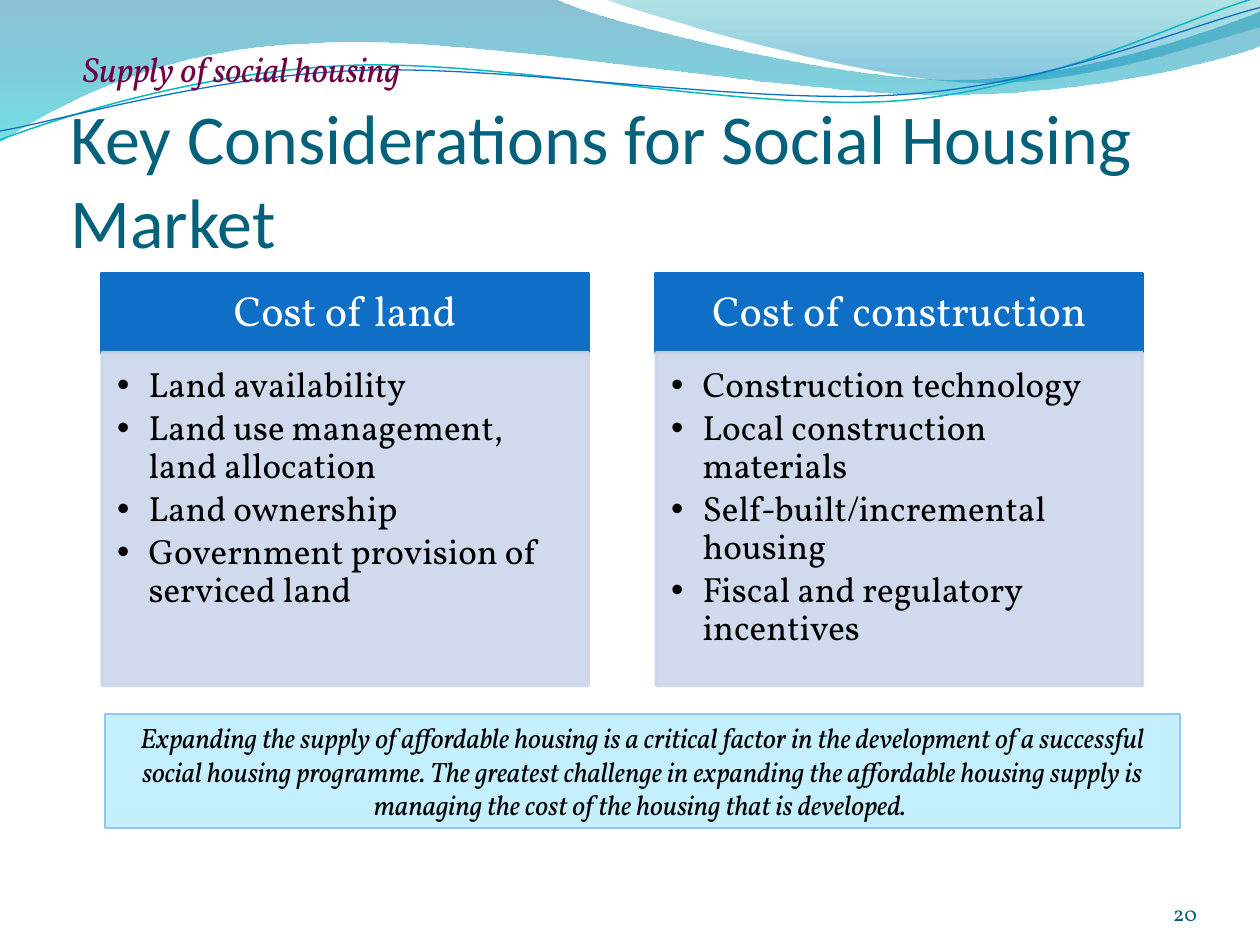
from lxml import etree
from pptx import Presentation
from pptx.dml.color import RGBColor
from pptx.enum.shapes import MSO_SHAPE
from pptx.enum.text import MSO_ANCHOR, MSO_AUTO_SIZE, PP_ALIGN
from pptx.oxml.ns import qn
from pptx.util import Cm, Pt

LEFT, CENTER, RIGHT = PP_ALIGN.LEFT, PP_ALIGN.CENTER, PP_ALIGN.RIGHT
TOP, MIDDLE, BOTTOM = MSO_ANCHOR.TOP, MSO_ANCHOR.MIDDLE, MSO_ANCHOR.BOTTOM
NO_AUTOFIT, GROW = MSO_AUTO_SIZE.NONE, MSO_AUTO_SIZE.SHAPE_TO_FIT_TEXT
RECTANGLE = MSO_SHAPE.RECTANGLE
SERIF, SANS = "Vollkorn", "Calibri"
DEFAULT_INSETS = (0.25, 0.13, 0.25, 0.13)
WAVE_UNIT = Cm(2.54)

LEFT_WAVE = [(0, 0), (4.4, -0.01), (4.76, 0.17, 6.64, 0.63, 7.58, 0.63),
             (8.53, 0.63, 9.58, 0.26, 10, 0.09), (10.01, 0.36),
             (9.83, 0.44, 8.7, 0.76, 7.46, 0.75), (6.22, 0.75, 3.82, 0.28, 2.57, 0.34),
             (1.29, 0.36, 0.46, 0.83, -0.01, 1.13), (0, 0)]
RIGHT_WAVE = [(4.79, -0.01), (5.09, 0.11, 6.82, 0.62, 7.69, 0.65),
              (8.56, 0.69, 9.61, 0.32, 10, 0.21), (10, 0), (4.79, -0.01)]
TEAL_LINE = [(0, 1.11), (0.48, 0.93, 1.58, 0.57, 2.77, 0.52),
             (3.95, 0.47, 5.93, 0.89, 7.13, 0.8), (8.33, 0.71, 9.38, 0.15, 9.98, -0.02)]
BLUE_LINE = [(0, 1.04), (0.47, 0.96, 1.64, 0.61, 2.83, 0.56),
             (4.03, 0.51, 5.97, 0.84, 7.17, 0.75), (8.36, 0.67, 9.41, 0.21, 10, 0.06)]

CARDS = [
    ("Cost of land",
     ["Land availability", "Land use management, land allocation", "Land ownership",
      "Government provision of serviced land"]),
    ("Cost of construction",
     ["Construction technology", "Local construction materials",
      "Self-built/incremental housing", "Fiscal and regulatory incentives"]),
]
NOTE = ("Expanding the supply of affordable housing is a critical factor in the development "
        "of a successful social housing programme. The greatest challenge in expanding the "
        "affordable housing supply is managing the cost of the housing that is developed. ")


def color(value):
    """Return the colour for a hex string."""
    return RGBColor.from_string(value)


def set_alphas(shape, percents):
    """Give the shape's own colours, in order, these opacities."""
    colors = shape._element.spPr.iter(qn("a:srgbClr"))
    for element, percent in zip(colors, percents):
        etree.SubElement(element, qn("a:alpha"), val=str(percent * 1000))


def add_path(slide, segments, close):
    """Add an outline of lines (two numbers) and cubic curves (six numbers)."""
    points = [(segment[i] * WAVE_UNIT, segment[i + 1] * WAVE_UNIT)
              for segment in segments for i in range(0, len(segment), 2)]
    builder = slide.shapes.build_freeform(*points[0])
    builder.add_line_segments(points[1:], close=close)
    shape = builder.convert_to_shape()
    shape.shadow.inherit = False
    lines = iter(list(shape._element.spPr.iter(qn("a:lnTo"))))
    for segment in segments[1:]:
        line = next(lines)
        if len(segment) == 6:
            line.tag = qn("a:cubicBezTo")
            for control in (next(lines), next(lines)):
                line.append(control[0])
                control.getparent().remove(control)
    return shape


def add_wave(slide, segments, stops):
    """Add a wave with a see-through gradient from top to bottom."""
    shape = add_path(slide, segments, True)
    shape.line.fill.background()
    shape.fill.gradient()
    shape.fill.gradient_angle = 270
    for gradient_stop, (position, value, _) in zip(shape.fill.gradient_stops, stops):
        gradient_stop.position = position
        gradient_stop.color.rgb = color(value)
    set_alphas(shape, [alpha for _, _, alpha in stops])


def add_wave_line(slide, segments, value, width):
    """Add a thin curved line."""
    shape = add_path(slide, segments, False)
    shape.fill.background()
    shape.line.color.rgb = color(value)
    shape.line.width = Pt(width)


def write(shape, lines, size, value, font=SERIF, align=LEFT, anchor=MIDDLE,
          insets=DEFAULT_INSETS, italic=False, fit=NO_AUTOFIT):
    """Write formatted paragraphs into a shape and return them."""
    frame = shape.text_frame
    frame.text = "\n".join(lines)
    frame.word_wrap = True
    frame.auto_size = fit
    frame.vertical_anchor = anchor
    (frame.margin_left, frame.margin_top,
     frame.margin_right, frame.margin_bottom) = map(Cm, insets)
    for paragraph in frame.paragraphs:
        paragraph.alignment = align
        paragraph.font.name = font
        paragraph.font.size = Pt(size)
        paragraph.font.italic = italic
        paragraph.font.color.rgb = color(value)
    return frame.paragraphs


def add_label(slide, box, text, size, value, **formats):
    """Add a text box with one line of text."""
    write(slide.shapes.add_textbox(*map(Cm, box)), [text], size, value, **formats)


def add_box(slide, box, fill, line, width):
    """Add a filled rectangle."""
    shape = slide.shapes.add_shape(RECTANGLE, *map(Cm, box))
    shape.shadow.inherit = False
    shape.fill.solid()
    shape.fill.fore_color.rgb = color(fill)
    shape.line.color.rgb = color(line)
    shape.line.width = Pt(width)
    return shape


def add_bullet(paragraph):
    """Give a paragraph a hanging bullet."""
    paragraph.level = 1
    properties = paragraph._p.get_or_add_pPr()
    properties.set("marL", str(Cm(0.635)))
    properties.set("indent", str(-Cm(0.635)))
    etree.SubElement(properties, qn("a:buFont"), typeface="Arial")
    etree.SubElement(properties, qn("a:buChar"), char="•")
    properties.append(properties.find(qn("a:defRPr")))


def add_card(slide, left, heading, items):
    """Add a heading bar above a panel of bullets."""
    header = add_box(slide, (left, 5.51, 9.8, 1.6), "0F6FC6", "0F6FC6", 2)
    for paragraph in write(header, [heading], 24, "FFFFFF", align=CENTER,
                           insets=(0.48, 0.28, 0.48, 0.28)):
        paragraph.line_spacing = 0.9
    panel = add_box(slide, (left, 7.11, 9.8, 6.71), "CCD5EA", "CCD5EA", 2)
    set_alphas(panel, (90, 90))
    for paragraph in write(panel, items, 20, "000000", anchor=TOP,
                           insets=(0.3, 0.3, 0.41, 0.43)):
        paragraph.line_spacing = 0.9
        paragraph.space_after = Pt(3)
        add_bullet(paragraph)


def add_title(slide, box, text):
    """Format the title placeholder and bring it to the front."""
    title = slide.shapes.title
    title.left, title.top, title.width, title.height = map(Cm, box)
    write(title, [text], 40, "04617B", font=SANS, anchor=BOTTOM, insets=(0, 0.13, 0, 0))
    slide.shapes._spTree.append(title._element)


def main():
    """Build the slide and save it."""
    presentation = Presentation()
    presentation.slide_width, presentation.slide_height = Cm(25.4), Cm(19.05)
    slide = presentation.slides.add_slide(presentation.slide_layouts[5])
    add_wave(slide, LEFT_WAVE, [(0, "0074A1", 45), (1, "00C6CF", 55)])
    add_wave(slide, RIGHT_WAVE, [(0, "00A1A9", 30), (0.8, "008BBF", 45)])
    add_wave_line(slide, TEAL_LINE, "0AB8BF", 0.85)
    add_wave_line(slide, BLUE_LINE, "0F6FC6", 0.75)
    add_title(slide, (1.42, 2.11, 22.86, 3.18), "Key Considerations for Social Housing Market")
    add_label(slide, (22.02, 17.65, 2.11, 1.02), "20", 12, "045D75",
              align=RIGHT, anchor=BOTTOM, insets=(0, 0, 0, 0))
    add_label(slide, (1.42, 0.84, 22.86, 1.07), "Supply of social housing", 20, "6F0045",
              italic=True)
    for index, (heading, items) in enumerate(CARDS):
        add_card(slide, 2.06 + 11.17 * index, heading, items)
    note = add_box(slide, (2.12, 14.4, 21.67, 2.3), "C4EFFF", "91C6F7", 1)
    write(note, [NOTE], 16, "000000", align=CENTER, anchor=TOP, italic=True, fit=GROW)
    presentation.save("out.pptx")


if __name__ == "__main__":
    main()
